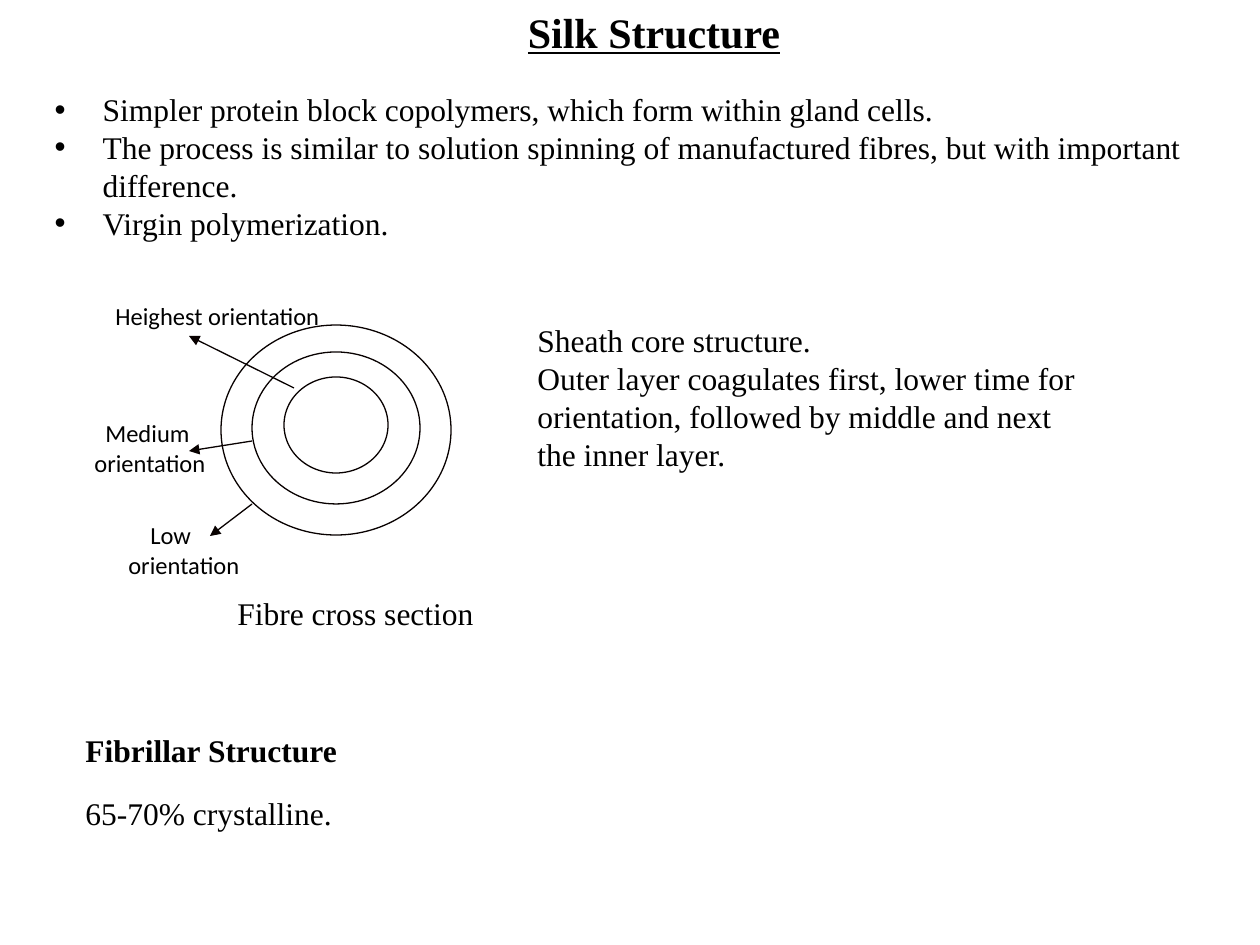
from lxml import etree
from pptx import Presentation
from pptx.dml.color import RGBColor
from pptx.enum.shapes import MSO_CONNECTOR, MSO_SHAPE
from pptx.enum.text import MSO_ANCHOR, MSO_AUTO_SIZE, PP_ALIGN
from pptx.oxml.ns import qn
from pptx.util import Pt

STRAIGHT = MSO_CONNECTOR.STRAIGHT
ELLIPSE = MSO_SHAPE.OVAL
TOP = MSO_ANCHOR.TOP
NO_AUTOFIT = MSO_AUTO_SIZE.NONE
LEFT = PP_ALIGN.LEFT
CENTER = PP_ALIGN.CENTER

PX_PER_INCH = 126
EMU_PER_PX = 914400 / PX_PER_INCH
COLORS = {"text": "000000", "line": "080100"}
SERIF = "Times New Roman"
TITLE = {"name": SERIF, "size": Pt(24), "bold": True, "underline": True}
BODY = {"name": SERIF, "size": Pt(18), "bold": False}
HEADING = {"name": SERIF, "size": Pt(18), "bold": True}
LABEL = {"name": "Calibri", "size": Pt(14), "bold": False}

BULLETS = [
    "Simpler protein block copolymers, which form within gland cells.",
    "The process is similar to solution spinning of manufactured fibres, but with important difference.",
    "Virgin polymerization.",
]
SHEATH_TEXT = (
    "Sheath core structure.\n"
    "Outer layer coagulates first, lower time for\n"
    "orientation, followed by middle and next\n"
    "the inner layer."
)
TEXTS = [
    ("Fibre cross section", (225, 588, 423, 50), BODY),
    (SHEATH_TEXT, (525, 315, 651, 165), BODY),
    ("Fibrillar Structure", (73, 725, 280, 50), HEADING),
    ("65-70% crystalline.", (73, 788, 1144, 50), BODY),
]
FIBRE_CENTER = 336
FIBRE_LAYERS = [(325, 230, 210), (352, 168, 152), (377, 104, 96)]
ARROWS = [
    ((252, 504), (210, 536)),
    ((252, 441), (189, 451)),
    ((294, 388), (189, 336)),
]
LABELS = [
    ("Heighest orientation", (103, 295, 243, 42), 0),
    ("Medium\norientation", (82, 412, 141, 72), 11),
    ("Low\norientation", (116, 514, 141, 72), 22),
]


def emu(px):
    return round(px * EMU_PER_PX)


class SlideBuilder:
    def __init__(self, presentation):
        self.slide = presentation.slides.add_slide(presentation.slide_layouts[1])

    def place(self, shape, box):
        for name, px in zip(("left", "top", "width", "height"), box):
            setattr(shape, name, emu(px))

    def format_text(self, shape, style, wrap=True, align=LEFT):
        frame = shape.text_frame
        settings = {"word_wrap": wrap, "auto_size": NO_AUTOFIT, "vertical_anchor": TOP}
        for name, value in settings.items():
            setattr(frame, name, value)
        for paragraph in frame.paragraphs:
            paragraph.alignment = align
            paragraph.space_before = Pt(0)
            for run in paragraph.runs:
                for name, value in style.items():
                    setattr(run.font, name, value)
                run.font.color.rgb = RGBColor.from_string(COLORS["text"])

    def title(self, text, box):
        shape = self.slide.shapes.title
        self.place(shape, box)
        shape.text_frame.text = text
        self.format_text(shape, TITLE, wrap=False, align=CENTER)

    def bullets(self, lines, box, indent):
        shape = self.slide.placeholders[1]
        self.place(shape, box)
        shape.text_frame.text = "\n".join(lines)
        self.format_text(shape, BODY)
        for paragraph in shape.text_frame.paragraphs:
            properties = paragraph._p.get_or_add_pPr()
            properties.set("marL", str(emu(indent)))
            properties.set("indent", str(-emu(indent)))
            etree.SubElement(properties, qn("a:buFont"), typeface="Arial")
            etree.SubElement(properties, qn("a:buChar"), char="•")

    def text(self, text, box, style, wrap=True, first_indent=0):
        shape = self.slide.shapes.add_textbox(*map(emu, box))
        paragraph = shape.text_frame.paragraphs[0]
        paragraph.text = text.replace("\n", "\v")
        self.format_text(shape, style, wrap)
        if first_indent:
            paragraph._p.get_or_add_pPr().set("indent", str(emu(first_indent)))

    def outline(self, shape):
        shape.line.color.rgb = RGBColor.from_string(COLORS["line"])
        shape.line.width = Pt(0.75)

    def ellipse(self, box):
        shape = self.slide.shapes.add_shape(ELLIPSE, *map(emu, box))
        shape.shadow.inherit = False
        shape.fill.background()
        self.outline(shape)

    def arrow(self, start, end):
        connector = self.slide.shapes.add_connector(STRAIGHT, *map(emu, start + end))
        self.outline(connector)
        etree.SubElement(connector.line._get_or_add_ln(), qn("a:tailEnd"), type="triangle")
        etree.SubElement(connector._element.spPr, qn("a:effectLst"))


def main():
    presentation = Presentation()
    presentation.slide_width = emu(10 * PX_PER_INCH)
    presentation.slide_height = emu(945)
    builder = SlideBuilder(presentation)
    builder.title("Silk Structure", (514, 0, 280, 63))
    builder.bullets(BULLETS, (42, 84, 1187, 165), 48)
    for text, box, style in TEXTS:
        builder.text(text, box, style)
    for top, width, height in FIBRE_LAYERS:
        builder.ellipse((FIBRE_CENTER - width // 2, top, width, height))
    for start, end in ARROWS:
        builder.arrow(start, end)
    for text, box, first_indent in LABELS:
        builder.text(text, box, LABEL, wrap=False, first_indent=first_indent)
    presentation.save("out.pptx")


if __name__ == "__main__":
    main()
